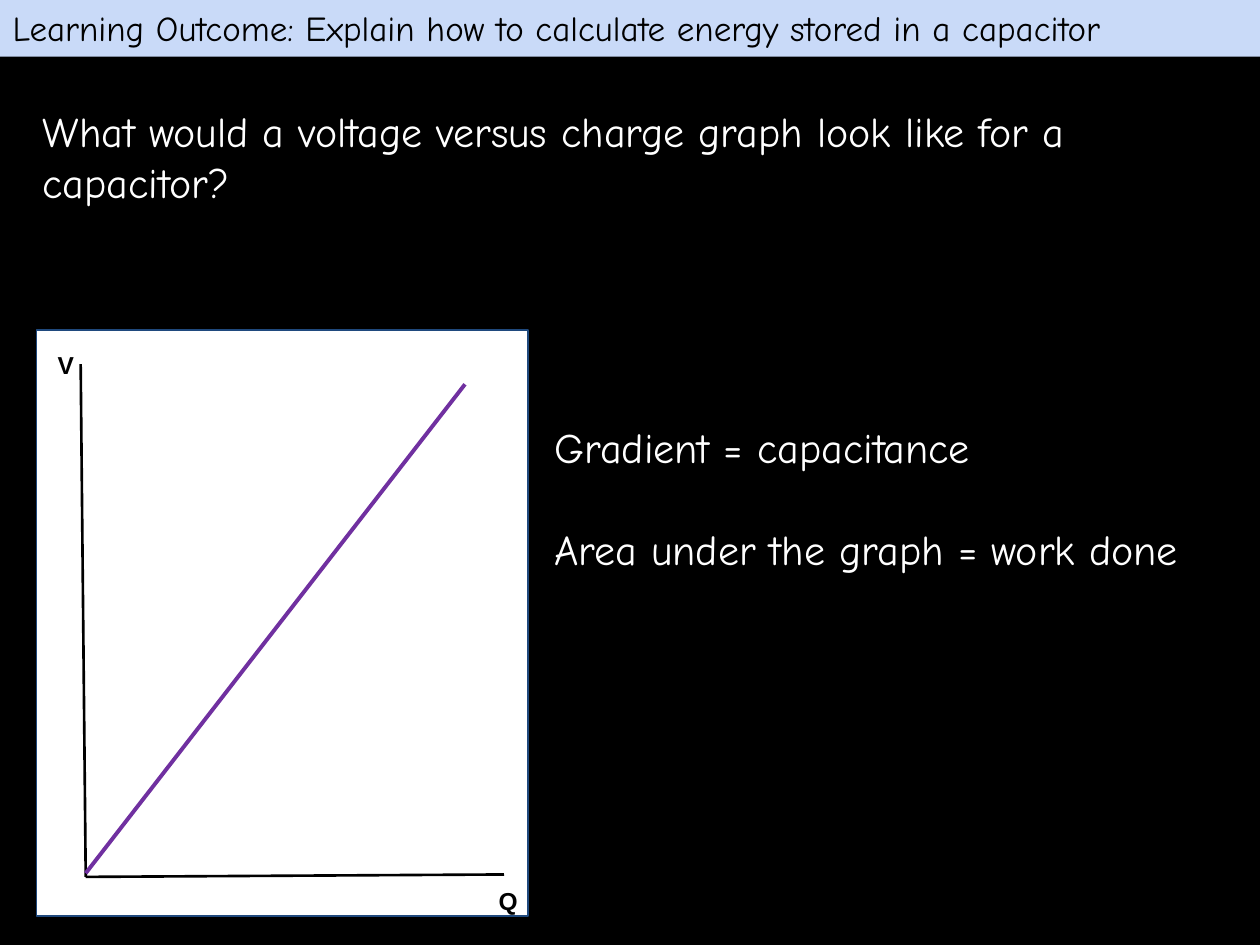
from dataclasses import dataclass

from pptx import Presentation
from pptx import util as u
from pptx.dml.color import RGBColor
from pptx.enum import shapes, text
from pptx.oxml.ns import qn


@dataclass(frozen=True)
class Theme:
    background: str = "000000"
    bar: str = "C9DAF8"
    paper: str = "FFFFFF"
    paper_edge: str = "1F497D"
    light: str = "FFFFFF"
    dark: str = "000000"
    plot: str = "7030A0"
    body_font: str = "Comic Neue"
    label_font: str = "Arial"
    heading_size: float = 20
    body_size: float = 24
    label_size: float = 14
    edge_width: float = 0.75
    axis_width: float = 1.5
    plot_width: float = 2.25


class SlideBuilder:
    """Holds the theme and the current slide; all lengths are in points."""

    def __init__(self, slide, theme):
        self.slide = slide
        self.theme = theme
        self.paint(slide.background.fill, theme.background)

    @staticmethod
    def paint(fill, color):
        fill.solid()
        fill.fore_color.rgb = RGBColor.from_string(color)

    @staticmethod
    def stroke(line, color, width):
        line.color.rgb = RGBColor.from_string(color)
        line.width = u.Pt(width)

    @staticmethod
    def place(item, box):
        for side, length in zip(("left", "top", "width", "height"), box):
            setattr(item, side, u.Pt(length))

    def set_text(self, frame, paragraphs, color, size, font, bold=False, inset=3.6, gap=0):
        """Fill a frame; gap is the space in front of every later paragraph."""
        frame_format = {
            "word_wrap": True,
            "auto_size": text.MSO_AUTO_SIZE.NONE,
            "vertical_anchor": text.MSO_ANCHOR.TOP,
            "margin_left": u.Pt(7.2),
            "margin_right": u.Pt(7.2),
            "margin_top": u.Pt(inset),
            "margin_bottom": u.Pt(inset),
        }
        font_format = {"name": font, "size": u.Pt(size), "bold": bold}
        for name, value in frame_format.items():
            setattr(frame, name, value)
        for index, wording in enumerate(paragraphs):
            paragraph = frame.add_paragraph() if index else frame.paragraphs[0]
            paragraph.alignment = text.PP_ALIGN.LEFT
            paragraph.space_before = u.Pt(gap if index else 0)
            run = paragraph.add_run()
            run.text = wording
            for name, value in font_format.items():
                setattr(run.font, name, value)
            run.font.color.rgb = RGBColor.from_string(color)

    def title(self, wording, box):
        heading = self.slide.shapes.title
        self.place(heading, box)
        self.paint(heading.fill, self.theme.bar)
        self.set_text(heading.text_frame, [wording], self.theme.dark,
                      self.theme.heading_size, self.theme.body_font)

    def body(self, paragraphs, box, gap=0):
        block = self.slide.shapes.add_textbox(*map(u.Pt, box))
        self.set_text(block.text_frame, paragraphs, self.theme.light,
                      self.theme.body_size, self.theme.body_font, gap=gap)

    def axis_label(self, wording, left, top):
        label = self.slide.shapes.add_textbox(*map(u.Pt, (left, top, 31, 27.4)))
        self.set_text(label.text_frame, [wording], self.theme.dark,
                      self.theme.label_size, self.theme.label_font, bold=True, inset=7.2)

    def panel(self, box):
        paper = self.slide.shapes.add_shape(shapes.MSO_SHAPE.RECTANGLE, *map(u.Pt, box))
        paper.shadow.inherit = False
        self.paint(paper.fill, self.theme.paper)
        self.stroke(paper.line, self.theme.paper_edge, self.theme.edge_width)

    def line(self, start, end, color, width):
        connector = self.slide.shapes.add_connector(
            shapes.MSO_CONNECTOR.STRAIGHT, *map(u.Pt, (*start, *end)))
        self.stroke(connector.line, color, width)
        properties = connector._element.spPr
        properties.append(properties.makeelement(qn("a:effectLst"), {}))


def main():
    deck = Presentation()
    deck.slide_width, deck.slide_height = u.Pt(720), u.Pt(540)
    theme = Theme()
    page = SlideBuilder(deck.slides.add_slide(deck.slide_layouts[5]), theme)

    page.title("Learning Outcome: Explain how to calculate energy stored in a capacitor",
               (0, 0, 720, 32.4))
    page.body(["What would a voltage versus charge graph look like for a capacitor?"],
              (17.3, 56.9, 686, 141.8))

    page.panel((20.9, 188.6, 280.8, 334.8))
    origin = (49, 501.1)
    for axis_end in ((46.1, 208.1), (288, 499.7)):
        page.line(axis_end, origin, theme.dark, theme.axis_width)
    page.body(["Gradient = capacitance", "Area under the graph = work done"],
              (309.6, 237.6, 414.7, 268.6), gap=29)
    page.axis_label("V", 25.9, 193)
    page.axis_label("Q", 277.9, 499)
    page.line((49, 499), (265.7, 219.6), theme.plot, theme.plot_width)

    deck.save("out.pptx")


if __name__ == "__main__":
    main()
